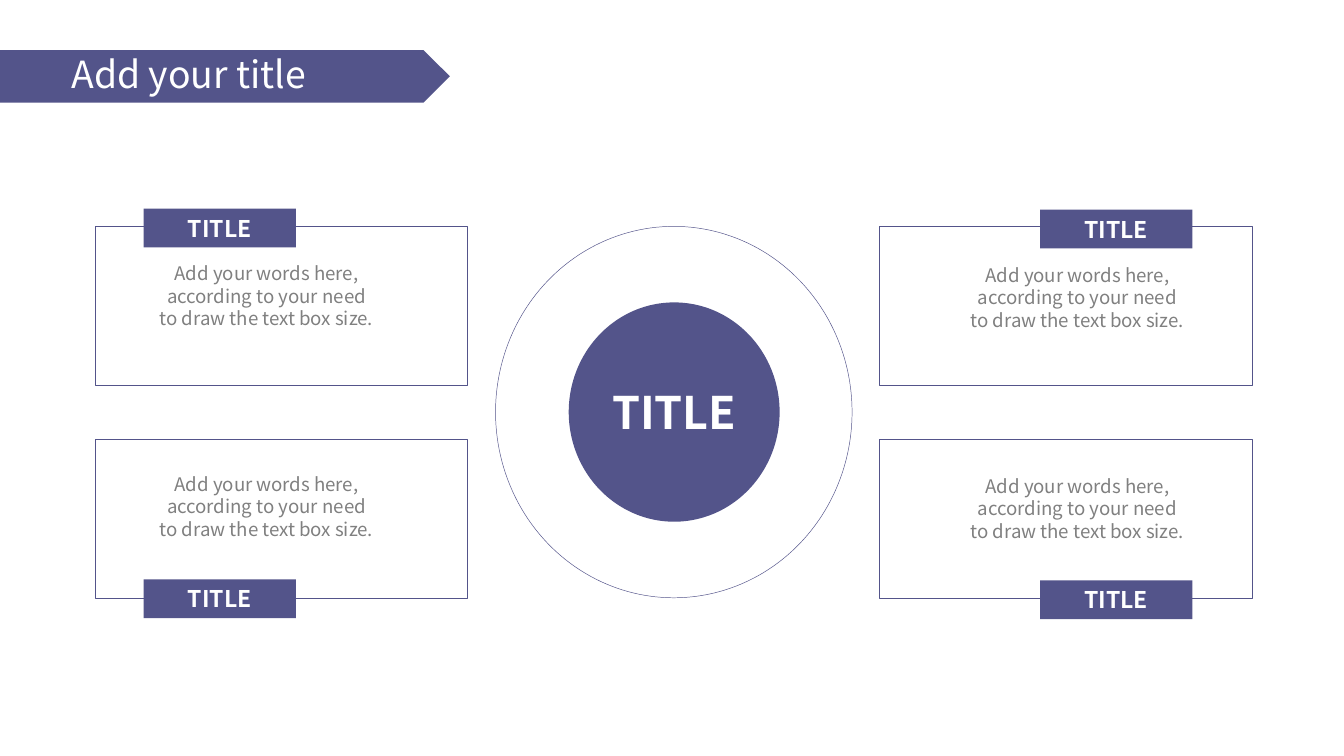
from pptx import Presentation
from pptx.dml.color import RGBColor
from pptx.enum.shapes import MSO_SHAPE
from pptx.enum.text import MSO_ANCHOR, PP_ALIGN
from pptx.util import Pt

RECTANGLE, OVAL, PENTAGON = MSO_SHAPE.RECTANGLE, MSO_SHAPE.OVAL, MSO_SHAPE.PENTAGON
TOP, MIDDLE = MSO_ANCHOR.TOP, MSO_ANCHOR.MIDDLE
LEFT, CENTER = PP_ALIGN.LEFT, PP_ALIGN.CENTER
TITLE_ONLY = 5
FONT = "Noto Sans CJK JP"
COLORS = {"violet": "53548A", "white": "FFFFFF", "gray": "808080"}
BODY = ["Add your words here,", "according to your need", "to draw the text box size."]

presentation = Presentation()
presentation.slide_width, presentation.slide_height = Pt(720), Pt(405)
slide = presentation.slides.add_slide(presentation.slide_layouts[TITLE_ONLY])


def add_panel(kind, left, top, width, height, filled=True):
    """Add a shape that is either solid violet or only a thin violet outline."""
    shape = slide.shapes.add_shape(kind, Pt(left), Pt(top), Pt(width), Pt(height))
    shape.shadow.inherit = False
    violet = RGBColor.from_string(COLORS["violet"])
    if filled:
        shape.fill.solid()
        shape.fill.fore_color.rgb = violet
        shape.line.fill.background()
    else:
        shape.fill.background()
        shape.line.color.rgb = violet
        shape.line.width = Pt(0.25)
    return shape


def write(shape, lines, size, color, bold=False, align=CENTER, anchor=MIDDLE, spacing=None):
    frame = shape.text_frame
    frame.word_wrap = True
    frame.vertical_anchor = anchor
    frame.margin_top = frame.margin_bottom = Pt(3)
    frame.text = "\n".join(lines)
    for paragraph in frame.paragraphs:
        paragraph.alignment = align
        paragraph.line_spacing = spacing
        paragraph.font.name = FONT
        paragraph.font.size = Pt(size)
        paragraph.font.bold = bold
        paragraph.font.color.rgb = RGBColor.from_string(COLORS[color])


# Heading: the banner goes behind the title placeholder
banner = add_panel(PENTAGON, 0, 26.8, 241, 28.2)
title = slide.shapes.title
banner.element.getparent().append(title.element)
title.left, title.top, title.width, title.height = Pt(31), Pt(22.4), Pt(194), Pt(34)
write(title, ["Add your title"], 20, "white", align=LEFT)

# Centre: ring and disc
add_panel(OVAL, 265.5, 121.3, 191, 199, filled=False)
disc = add_panel(OVAL, 304.7, 162, 113, 117.5)
write(disc, ["TITLE"], 24, "white", bold=True)
# The text area inside an oval is narrow: small side margins keep the word whole
disc.text_frame.margin_left = disc.text_frame.margin_right = 0
disc.text_frame.word_wrap = False

# Four boxes, each with a text and a tag on its outer edge
# (box left, text left, tag left, offset of texts and tags)
columns = [(51, 61.7, 77, 0), (471.2, 496.1, 557.2, 1)]
# (box top, text top, tag top)
rows = [(121.3, 137.4, 111.8), (235.4, 250.3, 310.4)]
for box_left, text_left, tag_left, offset in columns:
    for box_top, text_top, tag_top in rows:
        add_panel(RECTANGLE, box_left, box_top, 199.6, 85.1, filled=False)
        text_box = slide.shapes.add_textbox(
            Pt(text_left), Pt(text_top + offset), Pt(162), Pt(42.4))
        write(text_box, BODY, 10, "gray", anchor=TOP, spacing=Pt(12))
        tag = add_panel(RECTANGLE, tag_left, tag_top + offset / 2, 81.6, 20.8)
        write(tag, ["TITLE"], 12.3, "white", bold=True)

presentation.save("out.pptx")
